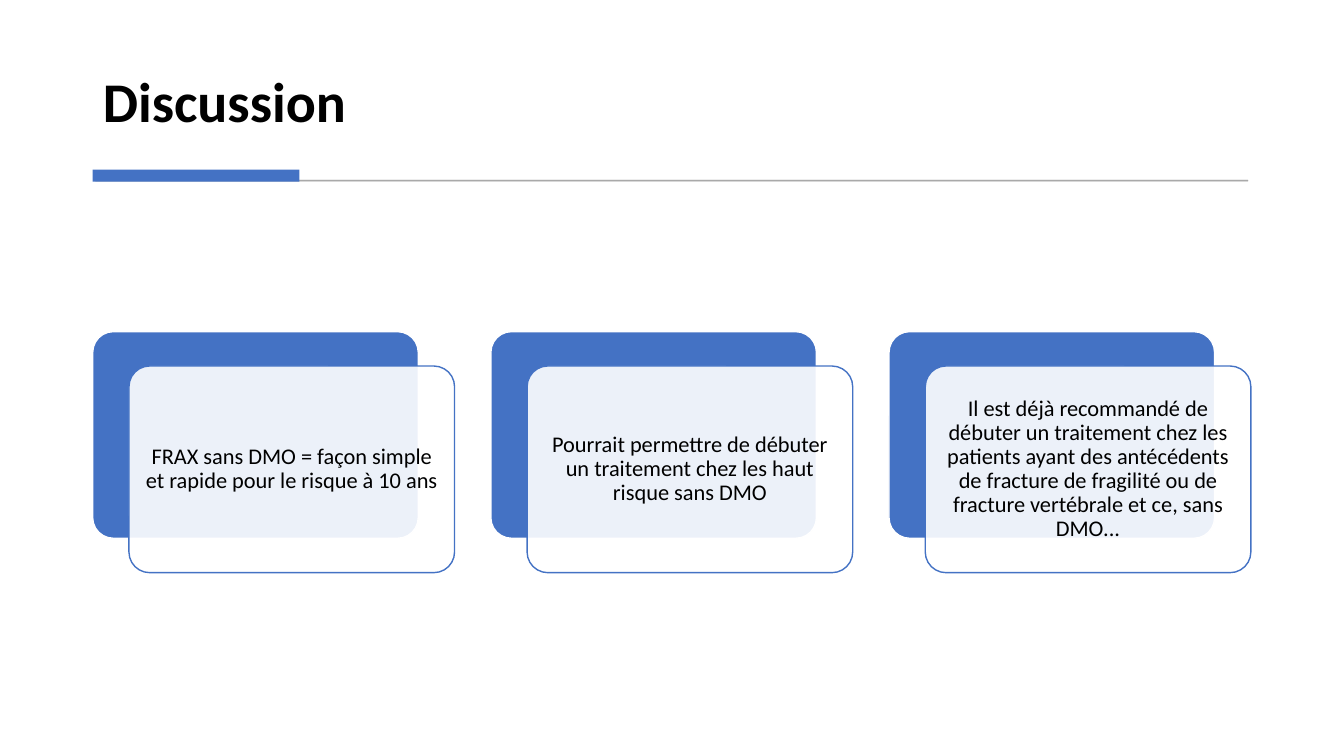
"""Build the discussion slide with three layered text cards."""
from dataclasses import dataclass

from lxml import etree
from pptx import Presentation
from pptx.dml.color import RGBColor
from pptx.enum.shapes import MSO_SHAPE
from pptx.enum.text import MSO_ANCHOR, MSO_AUTO_SIZE, PP_ALIGN
from pptx.oxml.ns import qn
from pptx.util import Pt

RECT, ROUNDED = MSO_SHAPE.RECTANGLE, MSO_SHAPE.ROUNDED_RECTANGLE
LEFT, CENTER = PP_ALIGN.LEFT, PP_ALIGN.CENTER
MIDDLE, BOTTOM = MSO_ANCHOR.MIDDLE, MSO_ANCHOR.BOTTOM
NO_AUTOFIT = MSO_AUTO_SIZE.NONE
BLUE, WHITE, GREY, BLACK = "4472C4", "FFFFFF", "595959", "000000"
FONT = "Calibri"

MARGIN = 66.24
CARD_TOP, CARD_PITCH = 236.9, 284.4
CARD_WIDTH, CARD_HEIGHT = 232.56, 147.6
SHIFT_X, SHIFT_Y = 25.92, 24.55
CARD_TEXTS = (
    "FRAX sans DMO = façon simple et rapide pour le risque à 10 ans",
    "Pourrait permettre de débuter un traitement chez les haut risque sans DMO",
    "Il est déjà recommandé de débuter un traitement chez les patients ayant des "
    "antécédents de fracture de fragilité ou de fracture vertébrale et ce, sans DMO...",
)


@dataclass(frozen=True)
class Panel:
    """Describe a filled shape, with lengths in points and opacity in percent."""

    left: float
    top: float
    width: float
    height: float
    fill: str
    line: str = ""
    line_width: float = 1
    kind: MSO_SHAPE = RECT
    fill_opacity: int = 100
    line_opacity: int = 100
    text: str = ""


def rgb(value: str) -> RGBColor:
    """Turn a hex string into a colour."""
    return RGBColor.from_string(value)


def apply(target: object, values: dict) -> None:
    """Set every attribute in a dict of format values."""
    for name, value in values.items():
        setattr(target, name, value)


def paint(fill, color: str, opacity: int) -> None:
    """Apply a solid colour and its opacity to a fill."""
    fill.solid()
    fill.fore_color.rgb = rgb(color)
    if opacity < 100:
        clr = fill._xPr.find(qn("a:solidFill"))[0]
        etree.SubElement(clr, qn("a:alpha"), val=str(opacity * 1000))


def write(tf, text: str, size: float, bold: bool, align, frame: dict) -> None:
    """Write one formatted paragraph into a text frame."""
    apply(tf, {"word_wrap": True, "auto_size": NO_AUTOFIT, **frame})
    p = tf.paragraphs[0]
    apply(p, {"alignment": align, "line_spacing": 0.9})
    r = p.add_run()
    r.text = text
    apply(r.font, {"name": FONT, "size": Pt(size), "bold": bold})
    r.font.color.rgb = rgb(BLACK)


def draw_panel(s, panel: Panel) -> None:
    """Draw a panel and its text on the slide."""
    box = (panel.left, panel.top, panel.width, panel.height)
    sp = s.shapes.add_shape(panel.kind, *map(Pt, box))
    sp.shadow.inherit = False
    paint(sp.fill, panel.fill, panel.fill_opacity)
    if panel.line:
        sp.line.width = Pt(panel.line_width)
        paint(sp.line.fill, panel.line, panel.line_opacity)
    else:
        sp.line.fill.background()
    if panel.kind == ROUNDED:
        sp.adjustments[0] = 0.1
    if panel.text:
        sides = ("left", "top", "right", "bottom")
        frame = {f"margin_{side}": Pt(4.8) for side in sides}
        write(sp.text_frame, panel.text, 16, False, CENTER,
              {"vertical_anchor": MIDDLE, **frame})


def draw_title(s) -> None:
    """Place and format the title placeholder."""
    sp = s.shapes.title
    apply(sp, {"left": Pt(MARGIN), "top": Pt(20.16),
               "width": Pt(827.28), "height": Pt(79.92)})
    write(sp.text_frame, "Discussion", 40, True, LEFT, {"vertical_anchor": BOTTOM})


def draw_card(s, index: int, text: str) -> None:
    """Draw a blue backing with a translucent text card shifted over it."""
    left = MARGIN + index * CARD_PITCH
    size = (CARD_WIDTH, CARD_HEIGHT)
    draw_panel(s, Panel(left, CARD_TOP, *size, BLUE, WHITE, kind=ROUNDED))
    draw_panel(s, Panel(left + SHIFT_X, CARD_TOP + SHIFT_Y, *size, WHITE, BLUE,
                        kind=ROUNDED, fill_opacity=90, text=text))


def main() -> None:
    """Build and save the slide."""
    prs = Presentation()
    apply(prs, {"slide_width": Pt(960), "slide_height": Pt(540)})
    s = prs.slides.add_slide(prs.slide_layouts[5])
    draw_title(s)
    draw_panel(s, Panel(68.4, 128.7, 822.96, 0.72, GREY, GREY, 0.75,
                        fill_opacity=30, line_opacity=30))
    draw_panel(s, Panel(MARGIN, 121.1, 147.6, 8.64, BLUE))
    for index, text in enumerate(CARD_TEXTS):
        draw_card(s, index, text)
    prs.save("out.pptx")


if __name__ == "__main__":
    main()
